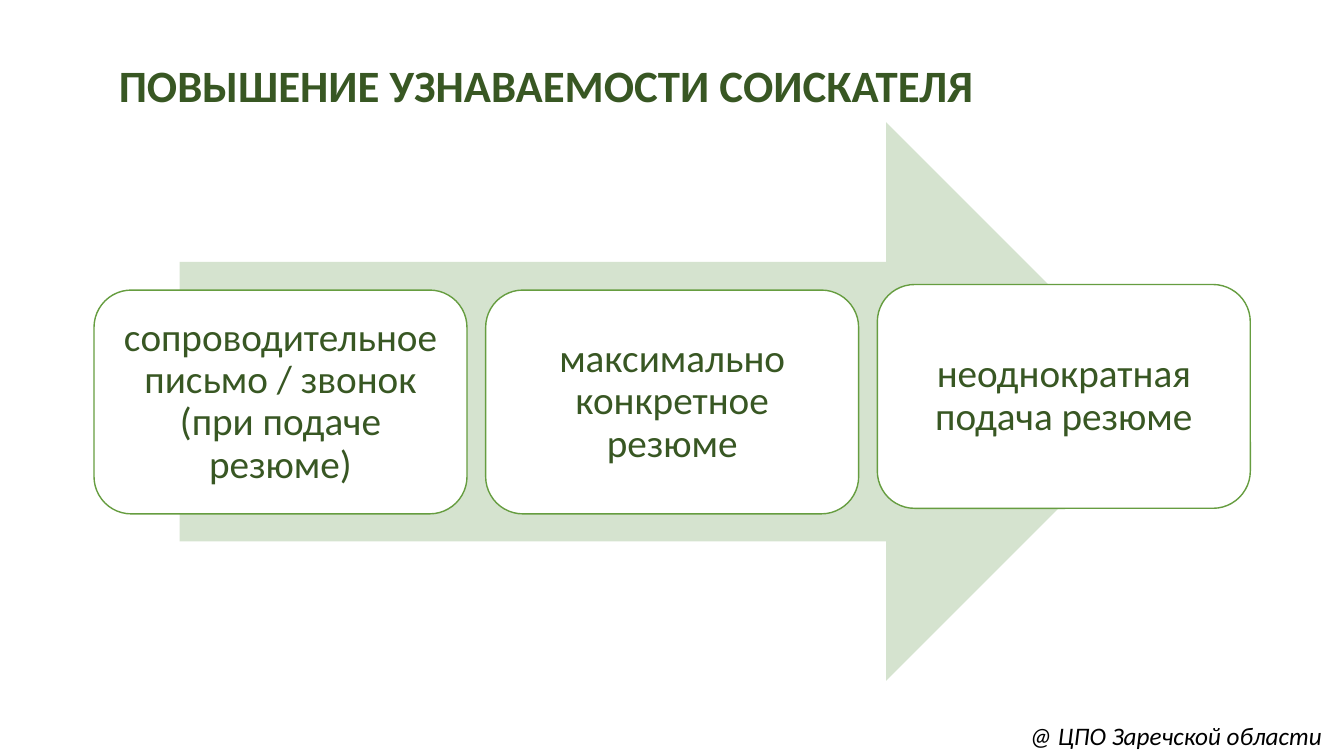
from dataclasses import dataclass

from pptx import Presentation
from pptx.dml.color import RGBColor
from pptx.enum.shapes import MSO_SHAPE
from pptx.enum.text import MSO_ANCHOR, MSO_AUTO_SIZE, PP_ALIGN
from pptx.util import Cm, Pt

RIGHT_ARROW = MSO_SHAPE.RIGHT_ARROW
ROUNDED = MSO_SHAPE.ROUNDED_RECTANGLE
MIDDLE = MSO_ANCHOR.MIDDLE
LEFT, CENTER = PP_ALIGN.LEFT, PP_ALIGN.CENTER
NO_AUTOFIT, GROW = MSO_AUTO_SIZE.NONE, MSO_AUTO_SIZE.SHAPE_TO_FIT_TEXT
TITLE_ONLY = 5


@dataclass(frozen=True)
class Theme:
    font: str = "Calibri"
    text: RGBColor = RGBColor(0x38, 0x57, 0x23)
    credit: RGBColor = RGBColor(0, 0, 0)
    arrow: RGBColor = RGBColor(0xD5, 0xE3, 0xCF)
    card: RGBColor = RGBColor(0xFF, 0xFF, 0xFF)
    outline: RGBColor = RGBColor(0x66, 0x9D, 0x40)
    title_size: Pt = Pt(32)
    step_size: Pt = Pt(28)
    credit_size: Pt = Pt(18)
    line_spacing: float = 0.9


THEME = Theme()

# Each step: wording and top edge in centimetres
STEPS = [
    ("сопроводительное письмо / звонок (при подаче резюме)", 7.31),
    ("максимально конкретное резюме", 7.31),
    ("неоднократная подача резюме", 7.17),
]
STEP_LEFT, STEP_PITCH = 2.37, 9.87
STEP_WIDTH, STEP_HEIGHT = 9.4, 5.64


def write(frame, wording, size, color, align=LEFT, bold=False, italic=False):
    paragraph = frame.paragraphs[0]
    paragraph.alignment = align
    run = paragraph.add_run()
    run.text = wording
    font = run.font
    font.name, font.size, font.bold, font.italic = THEME.font, size, bold, italic
    font.color.rgb = color
    return paragraph


def add_title(slide, wording):
    title = slide.shapes.title
    title.left, title.top = Cm(2.74), Cm(1.09)
    title.width, title.height = Cm(29.21), Cm(2.26)
    frame = title.text_frame
    frame.vertical_anchor = MIDDLE
    frame.auto_size = NO_AUTOFIT
    heading = write(frame, wording, THEME.title_size, THEME.text, bold=True)
    heading.line_spacing = THEME.line_spacing


def add_panel(slide, preset, left, top, width, height, fill, outline=None):
    panel = slide.shapes.add_shape(preset, Cm(left), Cm(top), Cm(width), Cm(height))
    panel.shadow.inherit = False
    panel.fill.solid()
    panel.fill.fore_color.rgb = fill
    if outline is None:
        panel.line.fill.background()
    else:
        panel.line.color.rgb = outline
        panel.line.width = Pt(1)
    return panel


def add_step(slide, left, top, wording):
    card = add_panel(slide, ROUNDED, left, top, STEP_WIDTH, STEP_HEIGHT,
                     THEME.card, THEME.outline)
    frame = card.text_frame
    frame.word_wrap = True
    frame.vertical_anchor = MIDDLE
    # The rounded corners already inset the text area
    frame.margin_left = frame.margin_right = Cm(0.3)
    frame.margin_top = frame.margin_bottom = Cm(0.3)
    step = write(frame, wording, THEME.step_size, THEME.text, CENTER)
    step.line_spacing = THEME.line_spacing


def add_credit(slide, wording):
    credit = slide.shapes.add_textbox(Cm(25.7), Cm(18.03), Cm(8.15), Cm(1.02))
    frame = credit.text_frame
    frame.word_wrap = False
    frame.auto_size = GROW
    write(frame, wording, THEME.credit_size, THEME.credit, italic=True)


def main():
    deck = Presentation()
    deck.slide_width, deck.slide_height = Cm(33.87), Cm(19.05)
    slide = deck.slides.add_slide(deck.slide_layouts[TITLE_ONLY])

    # Heading and credit line
    add_title(slide, "ПОВЫШЕНИЕ УЗНАВАЕМОСТИ СОИСКАТЕЛЯ")
    add_credit(slide, "@ ЦПО Заречской области")

    # Arrow behind the three steps
    add_panel(slide, RIGHT_ARROW, 4.53, 3.08, 24.84, 14.08, THEME.arrow)
    for index, (wording, top) in enumerate(STEPS):
        add_step(slide, STEP_LEFT + index * STEP_PITCH, top, wording)

    deck.save("out.pptx")


if __name__ == "__main__":
    main()
